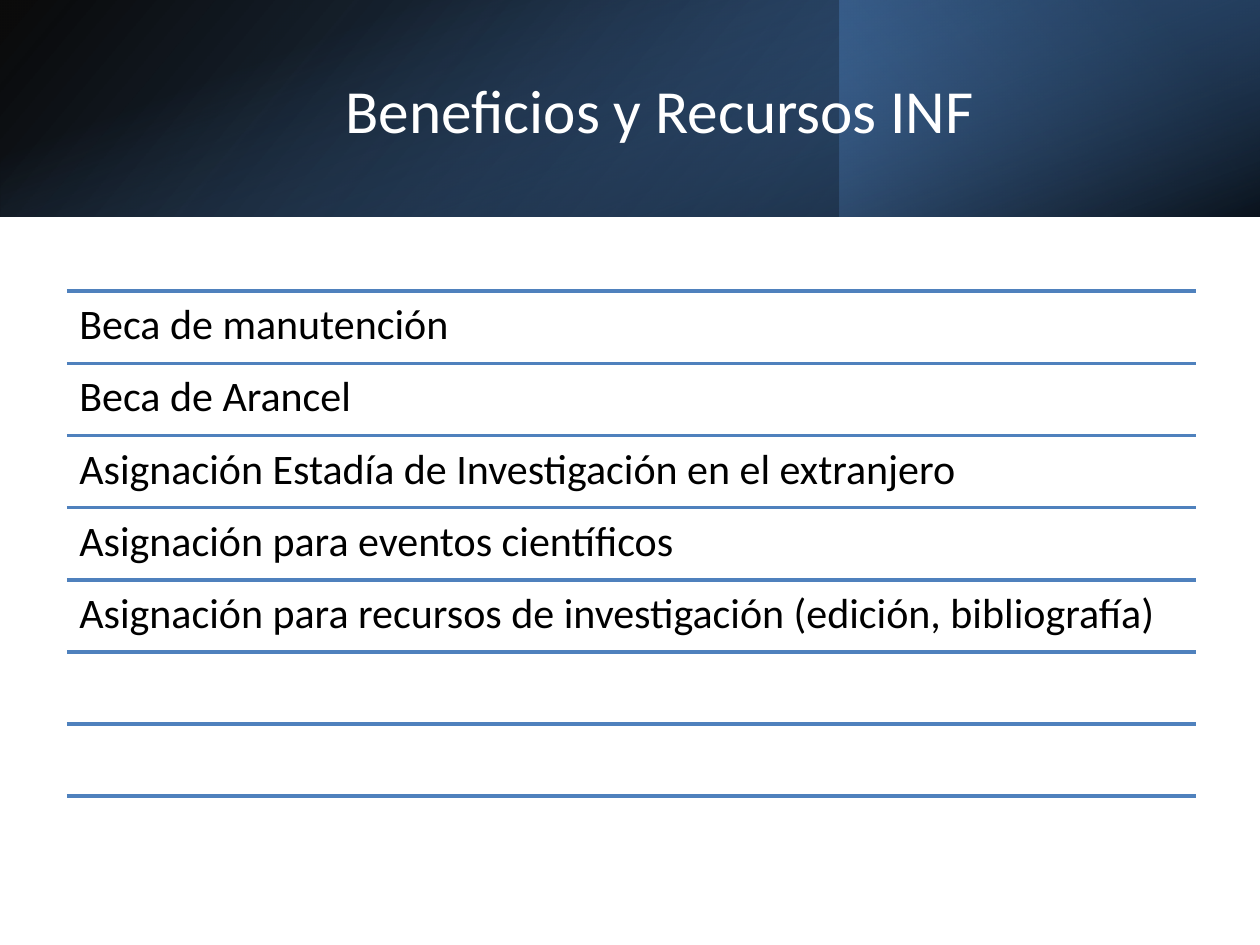
from lxml import etree
from pptx import Presentation, util as u
from pptx.dml.color import RGBColor
from pptx.enum import shapes, text
from pptx.oxml import parse_xml
from pptx.oxml.ns import nsdecls, qn

Cm = u.Cm
FONT = "Calibri"
COLOURS = {
    "black": "000000",
    "white": "FFFFFF",
    "steel": "366092",
    "navy": "244061",
    "blue": "4F81BD",
}
BENEFITS = [
    "Beca de manutención",
    "Beca de Arancel",
    "Asignación Estadía de Investigación en el extranjero",
    "Asignación para eventos científicos",
    "Asignación para recursos de investigación (edición, bibliografía)",
]
ROWS = 7
LEFT, TOP, WIDTH = Cm(1.35), Cm(5.87), Cm(22.76)
ROW_HEIGHT = Cm(10.18) // ROWS
BAND_HEIGHT = Cm(4.37)


def rgb(name):
    return RGBColor.from_string(COLOURS[name])


def style_paragraph(para, size, colour, align):
    para.alignment = align
    para.font.name = FONT
    para.font.size = u.Pt(size)
    para.font.color.rgb = rgb(colour)


def set_gradient(shape, stops, angle):
    """Fill with stops of (position %, colour name, opacity %), angle clockwise."""
    marks = "".join(
        f'<a:gs pos="{position * 1000}"><a:srgbClr val="{COLOURS[colour]}">'
        f'<a:alpha val="{opacity * 1000}"/></a:srgbClr></a:gs>'
        for position, colour, opacity in stops
    )
    gradient = parse_xml(
        f'<a:gradFill {nsdecls("a")} rotWithShape="1"><a:gsLst>{marks}</a:gsLst>'
        f'<a:lin ang="{angle * 60000}" scaled="0"/></a:gradFill>'
    )
    shape.fill.background()
    properties = shape.element.spPr
    properties.replace(properties.find(qn("a:noFill")), gradient)


def add_band(page, left, top, width, height, stops, angle, rotation=0, flip=False):
    band = page.shapes.add_shape(
        shapes.MSO_SHAPE.RECTANGLE, left, top, width, height
    )
    band.shadow.inherit = False
    band.line.fill.background()
    band.rotation = rotation
    if flip:
        band.element.spPr.find(qn("a:xfrm")).set("flipH", "1")
    set_gradient(band, stops, angle)


def add_header(page, page_width):
    add_band(page, 0, 0, page_width, BAND_HEIGHT,
             [(0, "black", 96), (100, "steel", 100)], 140, flip=True)
    glow_width = page_width // 3
    add_band(page, page_width - glow_width, 0, glow_width, BAND_HEIGHT,
             [(0, "navy", 68), (19, "navy", 68), (100, "blue", 79)], 320,
             rotation=180)
    # A quarter turn about its centre lays this tall band across the header
    offset = (page_width - BAND_HEIGHT) // 2
    add_band(page, offset, -offset, BAND_HEIGHT, page_width,
             [(0, "blue", 0), (23, "blue", 0), (99, "black", 74),
              (100, "black", 74)], 340, rotation=90)


def format_title(page, wording):
    title = page.shapes.title
    title.left, title.top = Cm(2.84), Cm(0.97)
    title.width, title.height = Cm(20.93), Cm(2.44)
    frame = title.text_frame
    frame.text = wording
    frame.auto_size = text.MSO_AUTO_SIZE.NONE
    frame.vertical_anchor = text.MSO_ANCHOR.MIDDLE
    style_paragraph(frame.paragraphs[0], 35, "white", text.PP_ALIGN.CENTER)
    title.element.getparent().append(title.element)  # in front of the bands


def add_rule(group, top):
    rule = group.shapes.add_connector(
        shapes.MSO_CONNECTOR.STRAIGHT, LEFT, top, LEFT + WIDTH, top
    )
    rule.line.color.rgb = rgb("blue")
    rule.line.width = u.Pt(2)
    etree.SubElement(rule.element.spPr, qn("a:effectLst"))


def add_benefit(group, top, wording):
    box = group.shapes.add_textbox(LEFT, top, WIDTH, ROW_HEIGHT)
    frame = box.text_frame
    frame.word_wrap = True
    frame.margin_left = frame.margin_right = Cm(0.25)
    frame.margin_top = frame.margin_bottom = Cm(0.25)
    frame.text = wording
    para = frame.paragraphs[0]
    para.line_spacing = 0.9
    style_paragraph(para, 24, "black", text.PP_ALIGN.LEFT)


def add_benefit_list(page):
    group = page.shapes.add_group_shape()
    for row in range(ROWS + 1):
        top = TOP + row * ROW_HEIGHT
        add_rule(group, top)
        if row < len(BENEFITS):
            add_benefit(group, top, BENEFITS[row])


def main():
    deck = Presentation()
    deck.slide_width, deck.slide_height = Cm(25.4), Cm(19.05)
    page = deck.slides.add_slide(deck.slide_layouts.get_by_name("Title Only"))
    page.background.fill.solid()
    page.background.fill.fore_color.rgb = rgb("white")
    add_header(page, deck.slide_width)
    format_title(page, "Beneficios y Recursos INF")
    add_benefit_list(page)
    deck.save("out.pptx")


if __name__ == "__main__":
    main()
